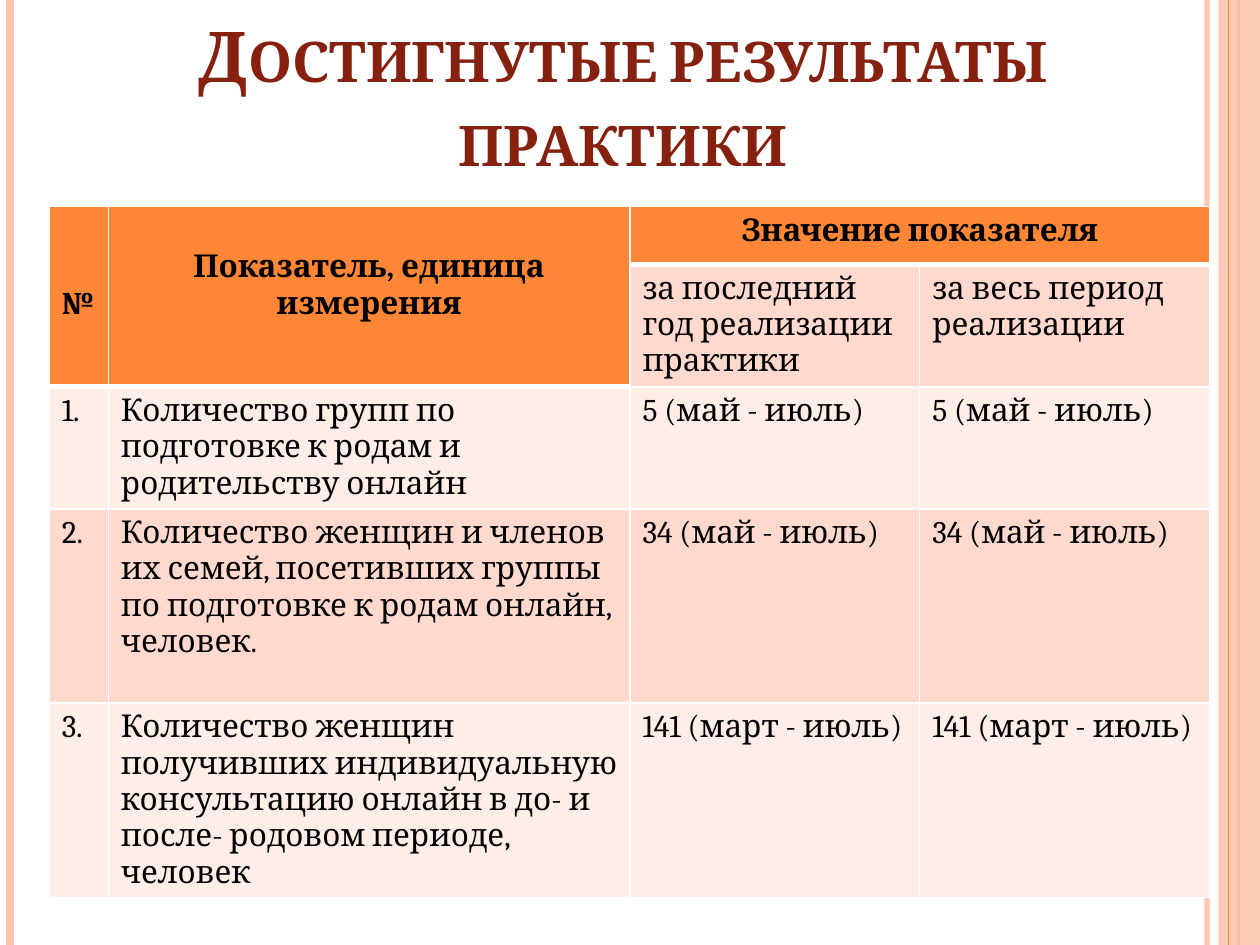
from lxml import etree
from pptx import Presentation
from pptx.dml.color import RGBColor
from pptx.enum.shapes import MSO_CONNECTOR, MSO_SHAPE
from pptx.enum.text import MSO_ANCHOR, PP_ALIGN
from pptx.oxml.ns import qn
from pptx.util import Inches, Pt

LINE, RECT = MSO_CONNECTOR.STRAIGHT, MSO_SHAPE.RECTANGLE
CENTER, LEFT = PP_ALIGN.CENTER, PP_ALIGN.LEFT
BOTTOM = MSO_ANCHOR.BOTTOM
FONT = "Cambria"
ORANGE, PEACH = "FE8637", "FEC3AE"
DARK, PALE = "FFD9CE", "FFEDE8"


def paint(fill, color, alpha=100):
    """Give a solid fill, with alpha as percent of opacity."""
    fill.solid()
    fill.fore_color.rgb = RGBColor.from_string(color)
    if alpha < 100:
        node = fill._xPr.find(qn("a:solidFill"))[0]
        etree.SubElement(node, qn("a:alpha")).set("val", str(alpha * 1000))


def style(para, size, color, bold, align):
    para.alignment = align
    for run in para.runs:
        font = run.font
        font.name, font.size, font.bold = FONT, Pt(size), bold
        font.color.rgb = RGBColor.from_string(color)


prs = Presentation()
prs.slide_width, prs.slide_height = Inches(10), Inches(7.5)
slide = prs.slides.add_slide(prs.slide_layouts[5])
shapes = slide.shapes

# Side stripes; the band lies between the third and fourth line
stripes = [(9.58, PEACH, 3, 93), (0.08, PEACH, 4.5, 100),
           (9.83, ORANGE, 1.5, 100), (9.75, ORANGE, 0.75, 100)]
for i, (x, color, width, alpha) in enumerate(stripes):
    if i == 3:
        band = shapes.add_shape(RECT, Inches(9.67), 0, Inches(0.33), Inches(7.5))
        band.shadow.inherit = False
        band.line.fill.background()
        paint(band.fill, PEACH, 87)
    line = shapes.add_connector(LINE, Inches(x), 0, Inches(x), Inches(7.5))
    line.line.width = Pt(width)
    paint(line.line.fill, color, alpha)
    etree.SubElement(line._element.spPr, qn("a:effectLst"))

# Title
title = shapes.title
title.left, title.top = Inches(0.86), Inches(0.23)
title.width, title.height = Inches(8.17), Inches(1.25)
frame = title.text_frame
frame.text = "Достигнутые результаты практики"
frame.word_wrap = True
frame.vertical_anchor = BOTTOM
style(frame.paragraphs[0], 40, "862110", True, CENTER)
frame.paragraphs[0].runs[0].font._element.set("cap", "small")

# Table
rows = [
    ["№", "Показатель, единица измерения", "Значение показателя", ""],
    ["", "", "за последний год реализации практики", "за весь период реализации"],
    ["1.", "Количество групп по подготовке к родам и родительству онлайн",
     "5 (май - июль)", "5 (май - июль)"],
    ["2.", "Количество женщин и членов их семей, посетивших группы по "
     "подготовке к родам онлайн, человек.", "34 (май - июль)", "34 (май - июль)"],
    ["3.", "Количество женщин получивших индивидуальную консультацию онлайн "
     "в до- и после- родовом периоде, человек",
     "141 (март - июль)", "141 (март - июль)"],
]
widths = [0.47, 4.14, 2.3, 2.3]
heights = [0.46, 0.97, 0.97, 1.54, 1.54]
table = shapes.add_table(len(rows), len(widths), Inches(0.39), Inches(1.64),
                         Inches(sum(widths)), Inches(sum(heights))).table
for col, width in zip(table.columns, widths):
    col.width = Inches(width)
for row, height in zip(table.rows, heights):
    row.height = Inches(height)
for c in range(2):
    table.cell(0, c).merge(table.cell(1, c))
table.cell(0, 2).merge(table.cell(0, 3))

for r, row in enumerate(rows):
    for c, text in enumerate(row):
        cell = table.cell(r, c)
        head = r == 0 or (r == 1 and c < 2)
        below = r == 1 or (r == 2 and c < 2)
        props = cell._tc.get_or_add_tcPr()
        for side, thick in [("L", False), ("R", False), ("T", below), ("B", head)]:
            edge = etree.SubElement(props, qn("a:ln" + side))
            edge.set("w", str(Pt(3 if thick else 1)))
            fill = etree.SubElement(edge, qn("a:solidFill"))
            etree.SubElement(fill, qn("a:srgbClr")).set("val", "FFFFFF")
        paint(cell.fill, ORANGE if head else DARK if r % 2 else PALE)
        if text:
            cell.text_frame.text = text
            style(cell.text_frame.paragraphs[0], 18, "000000", head,
                  CENTER if head and c else LEFT)

# The tall header cells start lower
table.cell(0, 0).margin_top = Inches(0.63)
table.cell(0, 1).margin_top = Inches(0.34)

prs.save("out.pptx")
